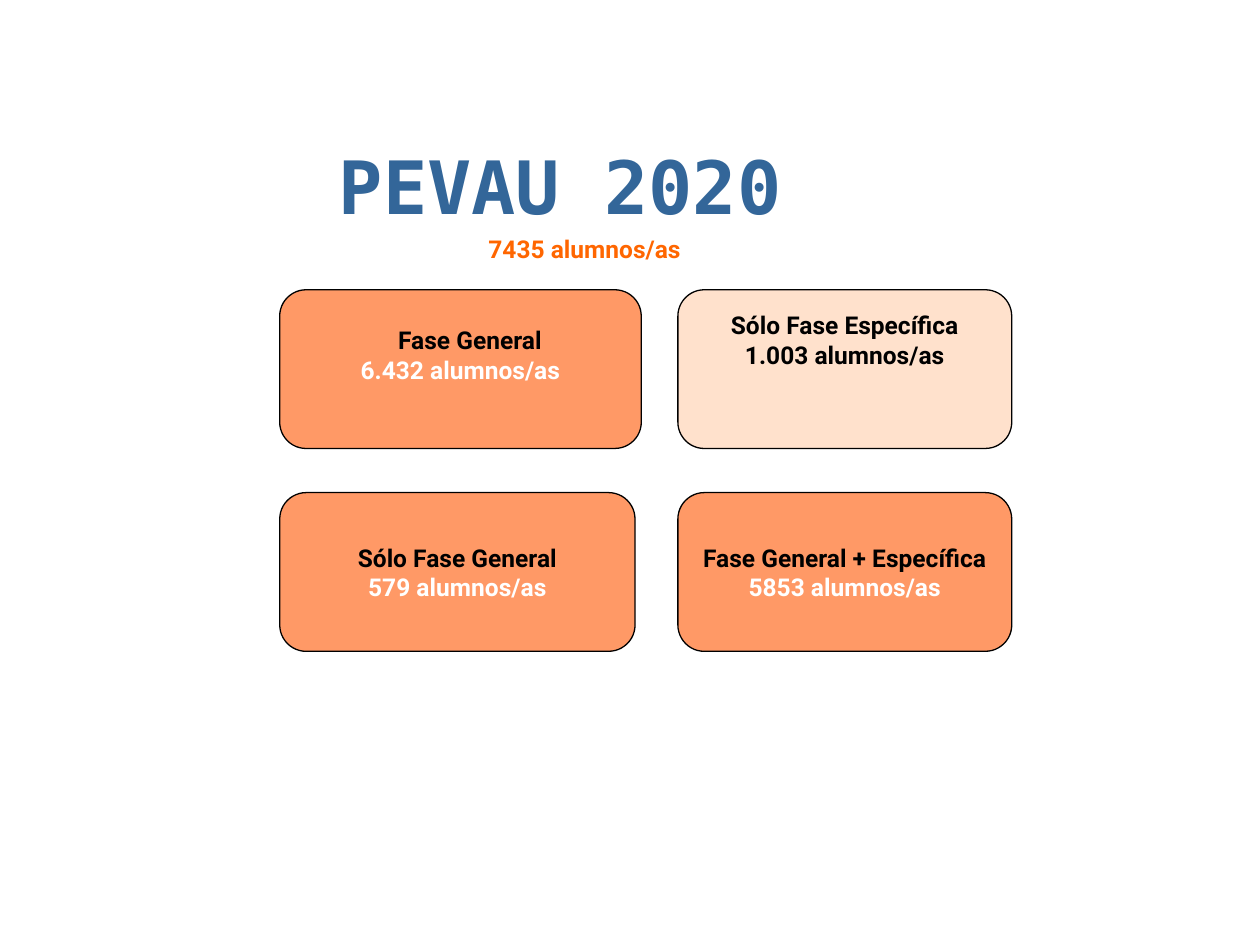
from pptx import Presentation
from pptx.dml.color import RGBColor
from pptx.enum.shapes import MSO_SHAPE
from pptx.enum.text import MSO_ANCHOR, PP_ALIGN
from pptx.util import Inches, Pt

ROUNDED = MSO_SHAPE.ROUNDED_RECTANGLE
MIDDLE, TOP = MSO_ANCHOR.MIDDLE, MSO_ANCHOR.TOP
CENTER = PP_ALIGN.CENTER

BLACK = RGBColor(0x00, 0x00, 0x00)
WHITE = RGBColor(0xFF, 0xFF, 0xFF)
BLUE = RGBColor(0x33, 0x66, 0x99)
ORANGE = RGBColor(0xFF, 0x66, 0x00)
SALMON = RGBColor(0xFF, 0x99, 0x66)
PEACH = RGBColor(0xFF, 0xE1, 0xCC)

LEFT_COLUMN, RIGHT_COLUMN = 2.22, 5.38
UPPER_ROW, LOWER_ROW = 2.3, 3.91
BOX_HEIGHT = 1.26

# left, top, width, fill, phase, count, count colour, left indent, bottom inset
PHASES = [
    (RIGHT_COLUMN, LOWER_ROW, 2.65, SALMON, "Fase General + Específica",
     "5853 alumnos/as", WHITE, 0, 0),
    (LEFT_COLUMN, LOWER_ROW, 2.82, SALMON, "Sólo Fase General",
     "579 alumnos/as", WHITE, 0, 0),
    (LEFT_COLUMN, UPPER_ROW, 2.87, SALMON, "Fase General",
     "6.432 alumnos/as", WHITE, 0.15, 0.23),
    (RIGHT_COLUMN, UPPER_ROW, 2.65, PEACH, "Sólo Fase Específica",
     "1.003 alumnos/as", BLACK, 0, 0.47),
]


def format_text(paragraph, text, *, color, size=14, font="Roboto", indent=0):
    """Write one bold, centred paragraph."""
    paragraph.alignment = CENTER
    if indent:
        paragraph._p.get_or_add_pPr().set("marL", str(Inches(indent)))
    run = paragraph.add_run()
    run.text = text
    run.font.name = font
    run.font.size = Pt(size)
    run.font.bold = True
    run.font.color.rgb = color


def set_frame(frame, anchor, horizontal=0, top=0, bottom=0):
    frame.word_wrap = True
    frame.vertical_anchor = anchor
    frame.margin_left = frame.margin_right = Inches(horizontal)
    frame.margin_top, frame.margin_bottom = Inches(top), Inches(bottom)


def add_heading(slide, left, top, width, height, text, inset, **text_format):
    box = slide.shapes.add_textbox(
        Inches(left), Inches(top), Inches(width), Inches(height))
    set_frame(box.text_frame, TOP, 0.07, inset, inset)
    paragraph = box.text_frame.paragraphs[0]
    format_text(paragraph, text, **text_format)
    return paragraph


def add_phase_box(slide, left, top, width, fill, phase, count, count_color,
                  indent, bottom_inset):
    shape = slide.shapes.add_shape(
        ROUNDED, Inches(left), Inches(top), Inches(width), Inches(BOX_HEIGHT))
    shape.shadow.inherit = False
    shape.fill.solid()
    shape.fill.fore_color.rgb = fill
    shape.line.color.rgb = BLACK
    shape.line.width = Pt(0.75)
    frame = shape.text_frame
    set_frame(frame, MIDDLE, bottom=bottom_inset)
    format_text(frame.paragraphs[0], phase, color=BLACK, indent=indent)
    format_text(frame.add_paragraph(), count, color=count_color)


def main():
    presentation = Presentation()
    presentation.slide_width = Inches(10)
    presentation.slide_height = Inches(7.5)
    slide = presentation.slides.add_slide(presentation.slide_layouts[6])

    # Phase boxes
    for phase in PHASES:
        add_phase_box(slide, *phase)

    # Title and total
    title = add_heading(slide, 1.95, 1.17, 4.99, 0.41, "PEVAU 2020", 0.03,
                        color=BLUE, size=42, font="DejaVu Sans Mono")
    title.line_spacing = 0.9
    title.space_before = Pt(4.2)
    add_heading(slide, 3.14, 1.82, 3, 0.31, "7435 alumnos/as", 0.04,
                color=ORANGE)

    presentation.save("out.pptx")


if __name__ == "__main__":
    main()
